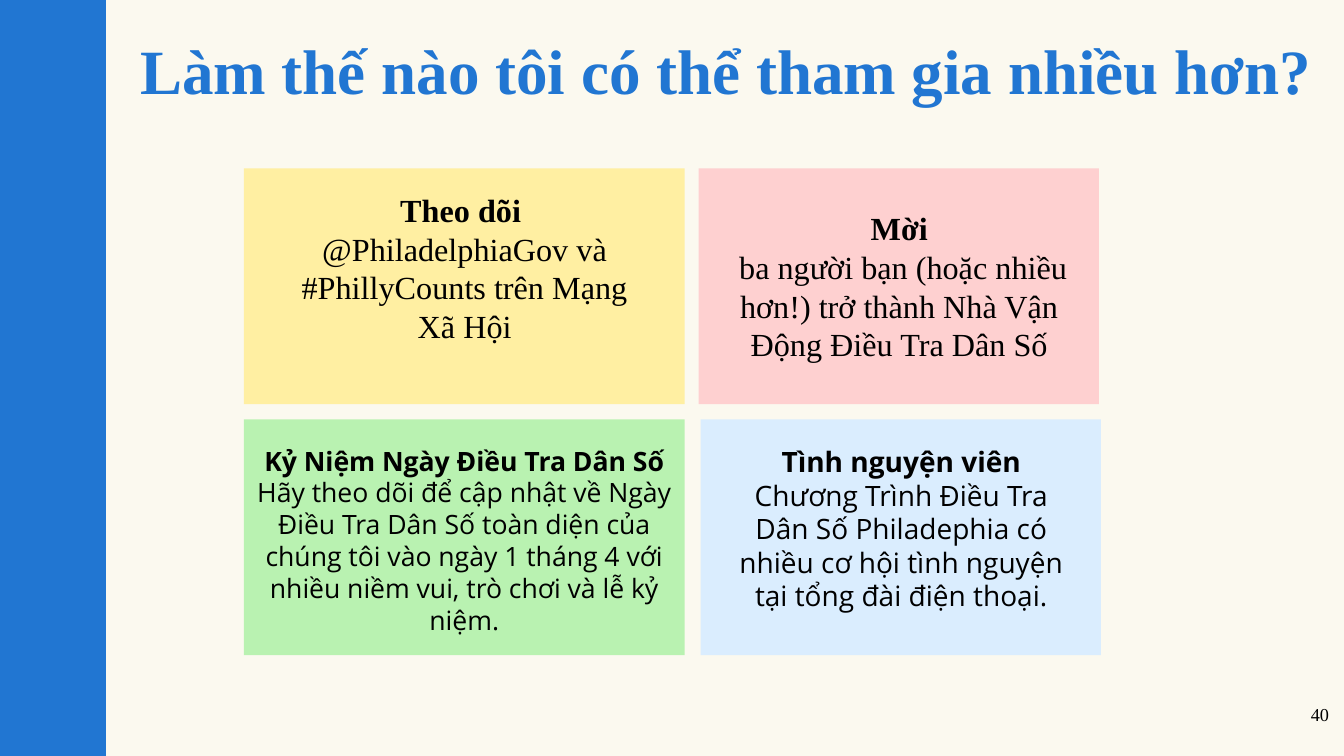
from dataclasses import dataclass

from pptx import Presentation
from pptx.dml.color import RGBColor
from pptx.enum import shapes, text
from pptx.util import Inches, Pt

BLUE, CREAM, BLACK = "2176D2", "FBF9EF", "000000"
SERIF, SANS = "Times New Roman", "Open Sans"
CENTER, RIGHT = text.PP_ALIGN.CENTER, text.PP_ALIGN.RIGHT
LINE_FACTOR = 1.2
ROW_TOPS = (1.67, 4.16)
CARD_HEIGHT = 2.34


@dataclass
class Box:
    left: float
    top: float
    width: float
    height: float

    def lengths(self) -> tuple:
        return tuple(map(Inches, (self.left, self.top, self.width, self.height)))


@dataclass
class Card:
    area: Box
    color: str
    text_area: Box
    heading: str
    body: str
    size: int
    face: str


CARDS = [
    Card(Box(2.42, ROW_TOPS[0], 4.37, CARD_HEIGHT), "FFEFA2", Box(2.83, 1.84, 3.56, 1.8),
         "Theo dõi ", "@PhiladelphiaGov và #PhillyCounts trên Mạng Xã Hội", 23, SERIF),
    Card(Box(6.93, ROW_TOPS[0], 3.97, CARD_HEIGHT), "FED0D0", Box(7.14, 2.02, 3.56, 2.04),
         "Mời", " ba người bạn (hoặc nhiều hơn!) trở thành Nhà Vận Động Điều Tra Dân Số",
         23, SERIF),
    Card(Box(2.42, ROW_TOPS[1], 4.37, CARD_HEIGHT), "B9F2B1", Box(2.42, 4.36, 4.37, 1.55),
         "Kỷ Niệm Ngày Điều Tra Dân Số",
         "Hãy theo dõi để cập nhật về Ngày Điều Tra Dân Số toàn diện của chúng tôi "
         "vào ngày 1 tháng 4 với nhiều niềm vui, trò chơi và lễ kỷ niệm.", 19, SANS),
    Card(Box(6.95, ROW_TOPS[1], 3.97, CARD_HEIGHT), "DAEDFE", Box(7.16, 4.36, 3.56, 1.11),
         "Tình nguyện viên",
         "Chương Trình Điều Tra Dân Số Philadephia có nhiều cơ hội tình nguyện "
         "tại tổng đài điện thoại.", 20, SANS),
]


def paint(fill, color: str) -> None:
    fill.solid()
    fill.fore_color.rgb = RGBColor.from_string(color)


def add_panel(slide, area: Box, color: str) -> None:
    panel = slide.shapes.add_shape(shapes.MSO_SHAPE.RECTANGLE, *area.lengths())
    panel.shadow.inherit = False
    panel.line.fill.background()
    paint(panel.fill, color)


def format_paragraph(paragraph, words: str, size: int, face: str, color: str,
                     bold: bool, align) -> None:
    paragraph.text = words
    paragraph.alignment = align
    paragraph.line_spacing = Pt(size * LINE_FACTOR)
    paragraph.font.size = Pt(size)
    paragraph.font.name = face
    paragraph.font.bold = bold
    paint(paragraph.font.fill, color)


def add_text_frame(slide, area: Box):
    frame = slide.shapes.add_textbox(*area.lengths()).text_frame
    frame.word_wrap = True
    return frame


def add_title(slide) -> None:
    title = slide.shapes.title
    title.left, title.top, title.width, title.height = Box(1.29, 0.26, 12.04, 0.86).lengths()
    frame = title.text_frame
    frame.auto_size = text.MSO_AUTO_SIZE.NONE
    frame.vertical_anchor = text.MSO_ANCHOR.TOP
    format_paragraph(frame.paragraphs[0], "Làm thế nào tôi có thể tham gia nhiều hơn?",
                     45, SERIF, BLUE, True, text.PP_ALIGN.LEFT)


def add_card_text(slide, card: Card) -> None:
    frame = add_text_frame(slide, card.text_area)
    format_paragraph(frame.paragraphs[0], card.heading, card.size, card.face,
                     BLACK, True, CENTER)
    format_paragraph(frame.add_paragraph(), card.body, card.size, card.face,
                     BLACK, False, CENTER)


def main() -> None:
    deck = Presentation()
    deck.slide_width, deck.slide_height = Inches(13.33), Inches(7.5)
    slide = deck.slides.add_slide(deck.slide_layouts.get_by_name("Title Only"))
    paint(slide.background.fill, CREAM)

    add_panel(slide, Box(0, 0, 1.05, 7.5), BLUE)
    add_title(slide)
    for card in CARDS:
        add_panel(slide, card.area, card.color)
        add_card_text(slide, card)

    page_number = add_text_frame(slide, Box(12.48, 6.93, 0.8, 0.57))
    format_paragraph(page_number.paragraphs[0], "40", 13, SERIF, BLACK, False, RIGHT)
    deck.save("out.pptx")


if __name__ == "__main__":
    main()
